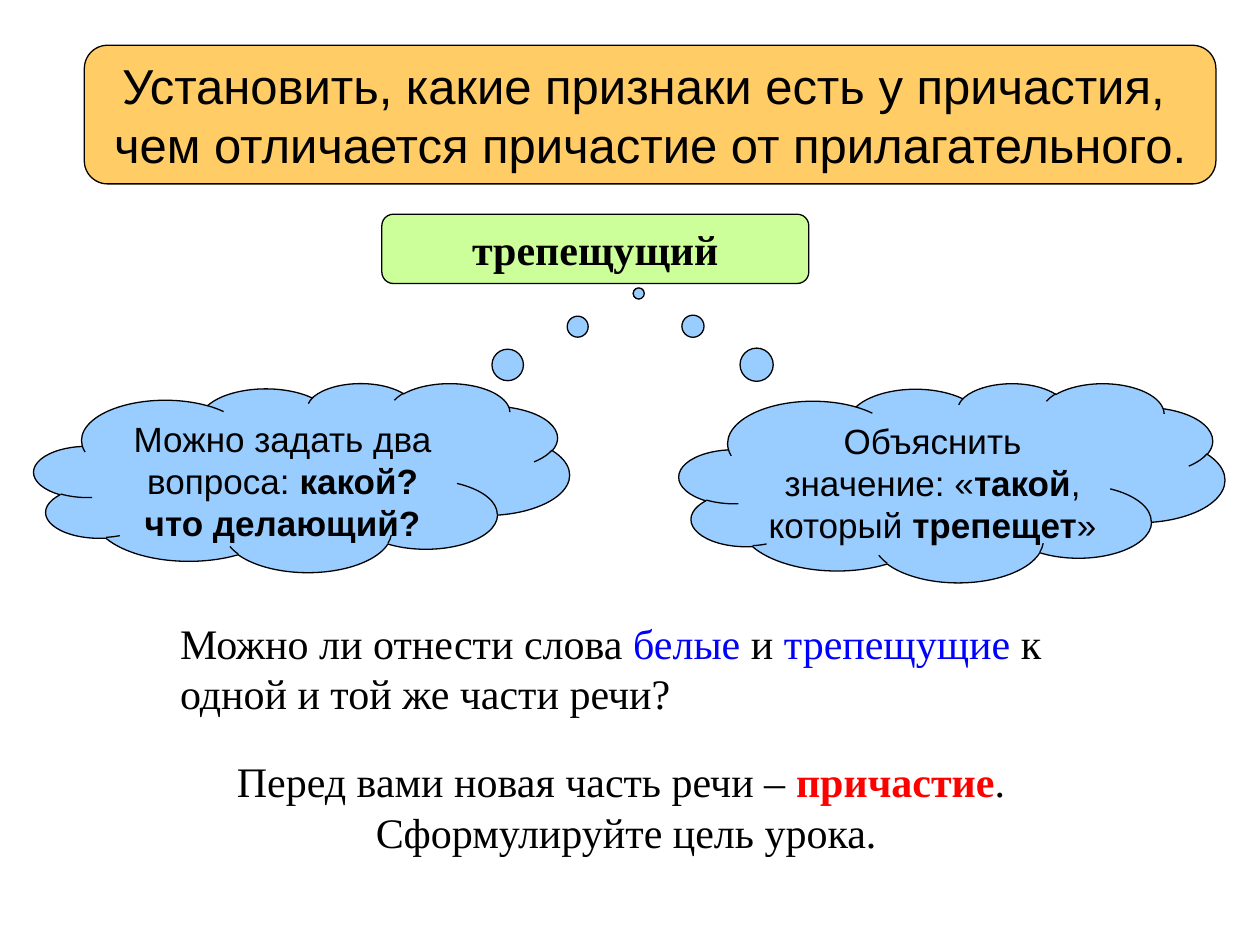
from dataclasses import dataclass
from typing import NamedTuple

from pptx import Presentation
from pptx.dml.color import RGBColor
from pptx.enum.shapes import MSO_SHAPE
from pptx.enum.text import MSO_ANCHOR, MSO_AUTO_SIZE, PP_ALIGN
from pptx.util import Pt

ROUNDED = MSO_SHAPE.ROUNDED_RECTANGLE
CLOUD = MSO_SHAPE.CLOUD_CALLOUT
TOP, MIDDLE = MSO_ANCHOR.TOP, MSO_ANCHOR.MIDDLE
LEFT, CENTER = PP_ALIGN.LEFT, PP_ALIGN.CENTER
GROW = MSO_AUTO_SIZE.SHAPE_TO_FIT_TEXT
SANS, SERIF = "Arial", "Times New Roman"
BLACK, BLUE, RED = "000000", "0000FF", "FF0000"
GREEN, SKY, ORANGE = "CCFF99", "99CCFF", "FFCC66"


class Run(NamedTuple):
    text: str
    bold: bool = False
    color: str = BLACK


class Box(NamedTuple):
    left: float
    top: float
    width: float
    height: float


@dataclass
class Text:
    paragraphs: list[list[Run]]
    size: float
    font: str
    align: PP_ALIGN = CENTER


@dataclass
class Panel:
    kind: MSO_SHAPE
    box: Box
    adjustments: tuple[float, ...]
    fill: str
    text: Text
    anchor: MSO_ANCHOR = MIDDLE
    wrap: bool = False


@dataclass
class Caption:
    box: Box
    text: Text


def rgb(value: str) -> RGBColor:
    return RGBColor.from_string(value)


def write(tf, text: Text) -> None:
    for i, runs in enumerate(text.paragraphs):
        p = tf.add_paragraph() if i else tf.paragraphs[0]
        p.alignment = text.align
        for run in runs:
            r = p.add_run()
            r.text = run.text
            r.font.name = text.font
            r.font.size = Pt(text.size)
            r.font.bold = run.bold
            r.font.color.rgb = rgb(run.color)


def draw_panel(s, panel: Panel) -> None:
    sp = s.shapes.add_shape(panel.kind, *map(Pt, panel.box))
    for i, value in enumerate(panel.adjustments):
        sp.adjustments[i] = value
    sp.shadow.inherit = False
    sp.fill.solid()
    sp.fill.fore_color.rgb = rgb(panel.fill)
    sp.line.color.rgb = rgb(BLACK)
    sp.line.width = Pt(0.75)
    tf = sp.text_frame
    tf.word_wrap = panel.wrap
    tf.vertical_anchor = panel.anchor
    write(tf, panel.text)


def draw_caption(s, caption: Caption) -> None:
    sp = s.shapes.add_textbox(*map(Pt, caption.box))
    tf = sp.text_frame
    tf.word_wrap = True
    tf.auto_size = GROW
    write(tf, caption.text)


PANELS = [
    Panel(ROUNDED, Box(218.2, 122.4, 244, 39.6), (0.167,), GREEN,
          Text([[Run("трепещущий", True)]], 24, SERIF)),
    Panel(CLOUD, Box(19.4, 218.9, 306, 108), (0.629, -0.974), SKY,
          Text([[Run("Можно задать два вопроса: "),
                 Run("какой? что делающий?", True)]], 20, SANS),
          TOP, True),
    Panel(CLOUD, Box(388.1, 218.9, 311.8, 113.8), (-0.574, -0.95), SKY,
          Text([[Run("Объяснить значение: «"), Run("такой", True),
                 Run(", который "), Run("трепещет", True), Run("»")]], 20, SANS),
          TOP, True),
    Panel(ROUNDED, Box(48.2, 25.9, 646.6, 79.2), (0.167,), ORANGE,
          Text([[Run("Установить, какие признаки есть у причастия, ")],
                [Run("чем отличается причастие от прилагательного.")]], 28, SANS)),
]

CAPTIONS = [
    Caption(Box(95.8, 349.2, 551.5, 64.8),
            Text([[Run("Можно ли отнести слова "), Run("белые", color=BLUE),
                   Run(" и "), Run("трепещущие", color=BLUE),
                   Run(" к одной и той же части речи?")]], 24, SERIF, LEFT)),
    Caption(Box(82.1, 428.4, 551.5, 64.8),
            Text([[Run("Перед вами новая часть речи – "),
                   Run("причастие", True, RED), Run(". ")],
                  [Run("Сформулируйте цель урока.")]], 24, SERIF)),
]


def main() -> None:
    prs = Presentation()
    prs.slide_width, prs.slide_height = Pt(720), Pt(540)
    s = prs.slides.add_slide(prs.slide_layouts[6])
    for panel in PANELS:
        draw_panel(s, panel)
    for caption in CAPTIONS:
        draw_caption(s, caption)
    prs.save("out.pptx")


if __name__ == "__main__":
    main()
